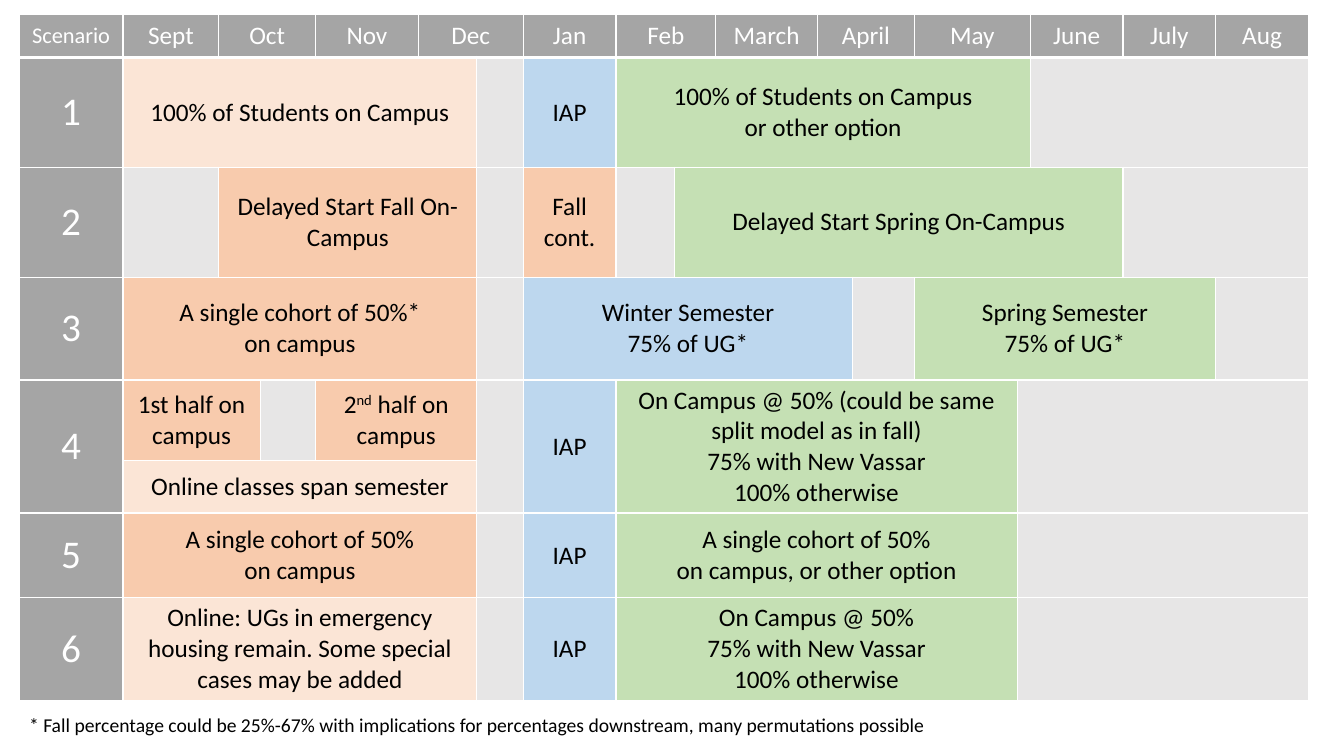
from dataclasses import dataclass

from lxml import etree
from pptx import Presentation
from pptx.dml.color import RGBColor
from pptx.enum import text
from pptx.oxml import ns
from pptx.util import Inches, Pt

FONT = "Calibri"
WHITE, BLACK = "FFFFFF", "000000"
HEADER, EMPTY = "A5A5A5", "E7E6E6"
PEACH, ORANGE, BLUE, GREEN = "FBE5D6", "F8CBAD", "BDD7EE", "C5E0B4"

COLUMN_WIDTHS = [1.03, 0.95, 0.41, 0.55, 1.02, 0.58, 0.46, 0.92, 0.58,
                 0.41, 1.01, 0.35, 0.61, 1.02, 0.13, 0.92, 0.92, 0.92]
ROW_HEIGHTS = [0.43, 1.09, 1.09, 1.02, 0.8, 0.48, 0.84, 0.86]


@dataclass(frozen=True)
class Band:
    """A block of the calendar; text between carets is superscript."""
    label: str
    fill: str
    columns: int = 1
    rows: int = 1
    size: int = 18
    color: str = BLACK


def month(name: str, columns: int = 1) -> Band:
    return Band(name, HEADER, columns, color=WHITE)


def scenario(number: int, rows: int = 1) -> Band:
    return Band(str(number), HEADER, rows=rows, size=28, color=WHITE)


def gap(columns: int = 1, rows: int = 1) -> Band:
    return Band("", EMPTY, columns, rows)


def iap(rows: int = 1) -> Band:
    return Band("IAP", BLUE, rows=rows)


# Bands of each table row, from left to right
CALENDAR = [
    [Band("Scenario", HEADER, size=16, color=WHITE), month("Sept"),
     month("Oct", 2), month("Nov"), month("Dec", 2), month("Jan"),
     month("Feb", 2), month("March"), month("April", 2), month("May", 2),
     month("June"), month("July"), month("Aug")],
    [scenario(1), Band("100% of Students on Campus", PEACH, 5), gap(), iap(),
     Band("100% of Students on Campus\nor other option", GREEN, 7), gap(3)],
    [scenario(2), gap(), Band("Delayed Start Fall On-Campus", ORANGE, 4),
     gap(), Band("Fall cont.", ORANGE), gap(),
     Band("Delayed Start Spring On-Campus", GREEN, 7), gap(2)],
    [scenario(3), Band("A single cohort of 50%*\non campus", ORANGE, 5),
     gap(), Band("Winter Semester\n75% of UG*", BLUE, 5), gap(),
     Band("Spring Semester\n75% of UG*", GREEN, 4), gap()],
    [scenario(4, rows=2), Band("1st half on campus", ORANGE, 2), gap(),
     Band("2^nd^ half on campus", ORANGE, 2), gap(rows=2), iap(rows=2),
     Band("On Campus @ 50% (could be same split model as in fall)\n"
          "75% with New Vassar\n100% otherwise", GREEN, 6, 2), gap(4, 2)],
    [Band("Online classes span semester", PEACH, 5)],
    [scenario(5), Band("A single cohort of 50%\non campus", ORANGE, 5),
     gap(), iap(),
     Band("A single cohort of 50%\non campus, or other option", GREEN, 6),
     gap(4)],
    [scenario(6), Band("Online: UGs in emergency housing remain. "
                       "Some special cases may be added", PEACH, 5),
     gap(), iap(),
     Band("On Campus @ 50%\n75% with New Vassar\n100% otherwise", GREEN, 6),
     gap(4)],
]


def rgb(value: str) -> RGBColor:
    return RGBColor.from_string(value)


def add_run(paragraph, content: str, size: int, color: str,
            superscript: bool = False) -> None:
    run = paragraph.add_run()
    run.text = content
    run.font.name = FONT
    run.font.size = Pt(size)
    run.font.color.rgb = rgb(color)
    if superscript:
        run._r.get_or_add_rPr().set("baseline", "30000")


def add_borders(cell, bottom: float = 1) -> None:
    properties = cell._tc.get_or_add_tcPr()
    for side, width in (("L", 1), ("R", 1), ("T", 1), ("B", bottom)):
        line = etree.SubElement(properties, ns.qn(f"a:ln{side}"),
                                w=str(Pt(width)))
        fill = etree.SubElement(line, ns.qn("a:solidFill"))
        etree.SubElement(fill, ns.qn("a:srgbClr"), val=WHITE)


def draw_band(table, row: int, column: int, band: Band) -> None:
    cell = table.cell(row, column)
    if band.columns > 1 or band.rows > 1:
        cell.merge(table.cell(row + band.rows - 1, column + band.columns - 1))
    cell.fill.solid()
    cell.fill.fore_color.rgb = rgb(band.fill)
    cell.vertical_anchor = text.MSO_ANCHOR.MIDDLE
    if not band.label:
        return
    frame = cell.text_frame
    for index, content in enumerate(band.label.split("\n")):
        paragraph = frame.add_paragraph() if index else frame.paragraphs[0]
        paragraph.alignment = text.PP_ALIGN.CENTER
        for part, piece in enumerate(content.split("^")):
            add_run(paragraph, piece, band.size, band.color, part % 2 == 1)


def draw_calendar(slide) -> None:
    table = slide.shapes.add_table(
        len(ROW_HEIGHTS), len(COLUMN_WIDTHS), Inches(0.19), Inches(0.14),
        Inches(sum(COLUMN_WIDTHS)), Inches(sum(ROW_HEIGHTS))).table
    table.first_row = table.horz_banding = False
    for column, width in zip(table.columns, COLUMN_WIDTHS):
        column.width = Inches(width)
    for index, (row, height) in enumerate(zip(table.rows, ROW_HEIGHTS)):
        row.height = Inches(height)
        for cell in row.cells:
            add_borders(cell, bottom=1 if index else 3)

    for row, bands in enumerate(CALENDAR):
        column = 0
        for band in bands:
            while table.cell(row, column).is_spanned:
                column += 1
            draw_band(table, row, column, band)
            column += band.columns


def draw_footnote(slide) -> None:
    box = slide.shapes.add_textbox(Inches(0.19), Inches(7.02),
                                   Inches(9.17), Inches(0.34))
    box.text_frame.word_wrap = False
    box.text_frame.auto_size = text.MSO_AUTO_SIZE.SHAPE_TO_FIT_TEXT
    add_run(box.text_frame.paragraphs[0],
            "* Fall percentage could be 25%-67% with implications for "
            "percentages downstream, many permutations possible", 14, BLACK)


def main() -> None:
    presentation = Presentation()
    presentation.slide_width = Inches(13.33)
    presentation.slide_height = Inches(7.5)
    slide = presentation.slides.add_slide(presentation.slide_layouts[6])
    draw_calendar(slide)
    draw_footnote(slide)
    presentation.save("out.pptx")


if __name__ == "__main__":
    main()
